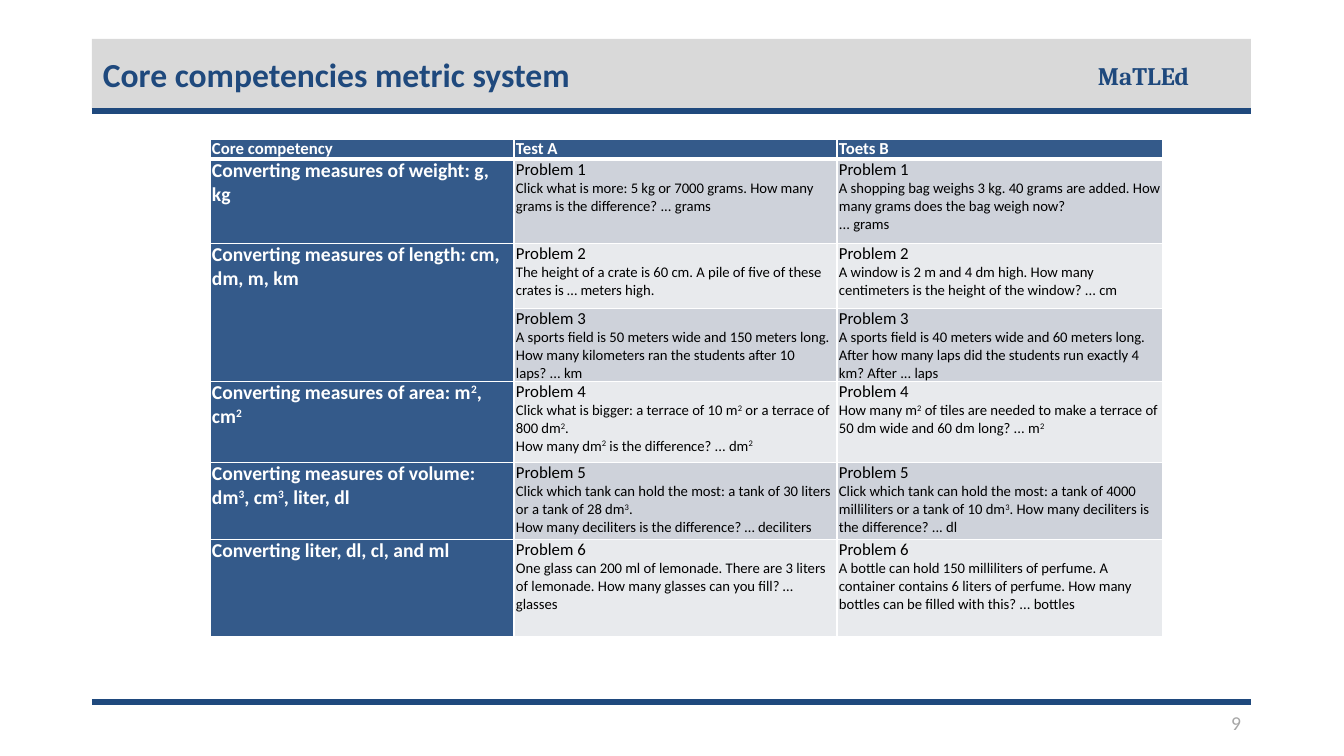
"""Build the slide that lists core competencies in the metric system."""
from dataclasses import dataclass

from lxml import etree
from pptx import Presentation, util as u
from pptx.dml.color import RGBColor
from pptx.enum import shapes, text
from pptx.oxml import ns

TITLE = "Core competencies metric system"
WORDMARK = "MaTLEd"
PAGE_NUMBER = "9"
HEADER = ("Core competency", "Test A", "Toets B")
COMPETENCIES = [
    ("Converting measures of weight: g, kg", [
        ("Click what is more: 5 kg or 7000 grams. How many grams is the difference? ... grams",
         "A shopping bag weighs 3 kg. 40 grams are added. How many grams does the bag weigh now?\n"
         "... grams"),
    ]),
    ("Converting measures of length: cm, dm, m, km", [
        ("The height of a crate is 60 cm. A pile of five of these crates is … meters high.",
         "A window is 2 m and 4 dm high. How many centimeters is the height of the window? ... cm"),
        ("A sports field is 50 meters wide and 150 meters long. "
         "How many kilometers ran the students after 10 laps? ... km",
         "A sports field is 40 meters wide and 60 meters long. "
         "After how many laps did the students run exactly 4 km? After ... laps"),
    ]),
    ("Converting measures of area: m^2, cm^2", [
        ("Click what is bigger: a terrace of 10 m^2 or a terrace of 800 dm^2.\n"
         "How many dm^2 is the difference? ... dm^2",
         "How many m^2 of tiles are needed to make a terrace of "
         "50 dm wide and 60 dm long? ... m^2"),
    ]),
    ("Converting measures of volume: dm^3, cm^3, liter, dl", [
        ("Click which tank can hold the most: a tank of 30 liters or a tank of 28 dm^3.\n"
         "How many deciliters is the difference? … deciliters",
         "Click which tank can hold the most: a tank of 4000 milliliters or a tank of 10 dm^3. "
         "How many deciliters is the difference? ... dl"),
    ]),
    ("Converting liter, dl, cl, and ml", [
        ("One glass can 200 ml of lemonade. There are 3 liters of lemonade. "
         "How many glasses can you fill? … glasses",
         "A bottle can hold 150 milliliters of perfume. A container contains 6 liters of perfume. "
         "How many bottles can be filled with this? ... bottles"),
    ]),
]

SLIDE_SIZE = (1344, 756)
LEFT, WIDTH = 92, 1159
BAND_TOP, BAND_HEIGHT = 39, 70
RULES = (111, 702)
TITLE_BOX = (93, 41, 1159, 72)
WORDMARK_BOX = (1088, 55, 112, 40)
NUMBER_BOX = (1052, 706, 199, 34)
TABLE_LEFT, TABLE_TOP = 210, 139
COLUMN_WIDTHS = (304, 323, 326)
ROW_HEIGHTS = (20, 84, 65, 65, 81, 77, 97)
CELL_INSET = 2


@dataclass(frozen=True)
class Theme:
    """Colours, fonts and point sizes of the slide."""
    navy: str = "1F497D"
    band: str = "D9D9D9"
    number: str = "A6A6A6"
    heading: str = "345A8A"
    stripes: tuple = ("E8EAED", "CED2DA")
    white: str = "FFFFFF"
    black: str = "000000"
    font: str = "Calibri"
    wordmark_font: str = "Cambria"
    title_size: float = 24
    wordmark_size: float = 18
    competency_size: float = 14
    label_size: float = 12
    problem_size: float = 10.5
    rule: float = 4.5
    border: float = 1
    header_border: float = 3


THEME = Theme()


def px(length):
    """Turn pixels into EMU."""
    return u.Emu(round(length * 914400 / 100.8))


def style(font, size, color, bold=False, name=THEME.font):
    """Set the look of a font."""
    font.size, font.bold, font.name = u.Pt(size), bold, name
    font.color.rgb = RGBColor.from_string(color)


def add_label(slide, box, content, anchor, *look):
    """Add a one-line text box and return its paragraph."""
    frame = slide.shapes.add_textbox(*map(px, box)).text_frame
    frame.word_wrap = True
    frame.vertical_anchor = anchor
    frame.text = content
    style(frame.paragraphs[0].runs[0].font, *look)
    return frame.paragraphs[0]


def add_rule(slide, y):
    """Add a full-width navy line."""
    rule = slide.shapes.add_connector(
        shapes.MSO_CONNECTOR.STRAIGHT, px(LEFT), px(y), px(LEFT + WIDTH), px(y))
    rule.line.color.rgb = RGBColor.from_string(THEME.navy)
    rule.line.width = u.Pt(THEME.rule)
    etree.SubElement(rule._element.spPr, ns.qn("a:effectLst"))


def write(paragraph, content, *look):
    """Write text in which a caret raises the next character."""
    plain, *raised = content.split("^")
    pieces = [(plain, False)]
    for piece in raised:
        pieces += [(piece[0], True), (piece[1:], False)]
    for piece, is_raised in pieces:
        if piece:
            run = paragraph.add_run()
            run.text = piece
            style(run.font, *look)
            if is_raised:
                run._r.get_or_add_rPr().set("baseline", "30000")


def fill_cell(cell, fill, lines, bottom=THEME.border):
    """Set the borders, fill and styled lines of a table cell."""
    properties = cell._tc.get_or_add_tcPr()
    for side in "LRTB":
        width = bottom if side == "B" else THEME.border
        line = etree.SubElement(properties, ns.qn("a:ln" + side), w=str(u.Pt(width)))
        solid = etree.SubElement(line, ns.qn("a:solidFill"))
        etree.SubElement(solid, ns.qn("a:srgbClr"), val=THEME.white)
    cell.fill.solid()
    cell.fill.fore_color.rgb = RGBColor.from_string(fill)
    cell.margin_left = cell.margin_right = px(CELL_INSET)
    cell.margin_top = cell.margin_bottom = 0
    frame = cell.text_frame
    for index, (content, *look) in enumerate(lines):
        paragraph = frame.add_paragraph() if index else frame.paragraphs[0]
        write(paragraph, content, *look)


def add_problem_table(slide):
    """Add the table of competencies and test problems."""
    table = slide.shapes.add_table(
        len(ROW_HEIGHTS), len(COLUMN_WIDTHS), px(TABLE_LEFT), px(TABLE_TOP),
        px(sum(COLUMN_WIDTHS)), px(sum(ROW_HEIGHTS))).table
    for column, width in zip(table.columns, COLUMN_WIDTHS):
        column.width = px(width)
    for row, height in zip(table.rows, ROW_HEIGHTS):
        row.height = px(height)
    for column, heading in enumerate(HEADER):
        fill_cell(table.cell(0, column), THEME.heading,
                  [(heading, THEME.label_size, THEME.white, True)], THEME.header_border)
    number = 0
    for competency, problems in COMPETENCIES:
        first = number + 1
        for tests in problems:
            number += 1
            lines = [(competency, THEME.competency_size, THEME.white, True)]
            fill_cell(table.cell(number, 0), THEME.heading, lines if number == first else [])
            for column, problem in enumerate(tests, 1):
                lines = [(f"Problem {number}", THEME.label_size, THEME.black)]
                lines += [(line, THEME.problem_size, THEME.black) for line in problem.split("\n")]
                fill_cell(table.cell(number, column), THEME.stripes[number % 2], lines)
        if number > first:
            table.cell(first, 0).merge(table.cell(number, 0))


def main():
    """Build and save the slide."""
    presentation = Presentation()
    presentation.slide_width, presentation.slide_height = map(px, SLIDE_SIZE)
    slide = presentation.slides.add_slide(presentation.slide_layouts[6])
    band = slide.shapes.add_shape(
        shapes.MSO_SHAPE.RECTANGLE, px(LEFT), px(BAND_TOP), px(WIDTH), px(BAND_HEIGHT))
    band.shadow.inherit = False
    band.fill.solid()
    band.fill.fore_color.rgb = RGBColor.from_string(THEME.band)
    band.line.fill.background()
    for y in RULES:
        add_rule(slide, y)
    middle, top = text.MSO_ANCHOR.MIDDLE, text.MSO_ANCHOR.TOP
    number = add_label(slide, NUMBER_BOX, PAGE_NUMBER, middle,
                       THEME.competency_size, THEME.number)
    number.alignment = text.PP_ALIGN.RIGHT
    add_label(slide, WORDMARK_BOX, WORDMARK, top,
              THEME.wordmark_size, THEME.navy, True, THEME.wordmark_font)
    title = add_label(slide, TITLE_BOX, TITLE, middle, THEME.title_size, THEME.navy, True)
    title.line_spacing = 0.9
    add_problem_table(slide)
    presentation.save("out.pptx")


if __name__ == "__main__":
    main()
